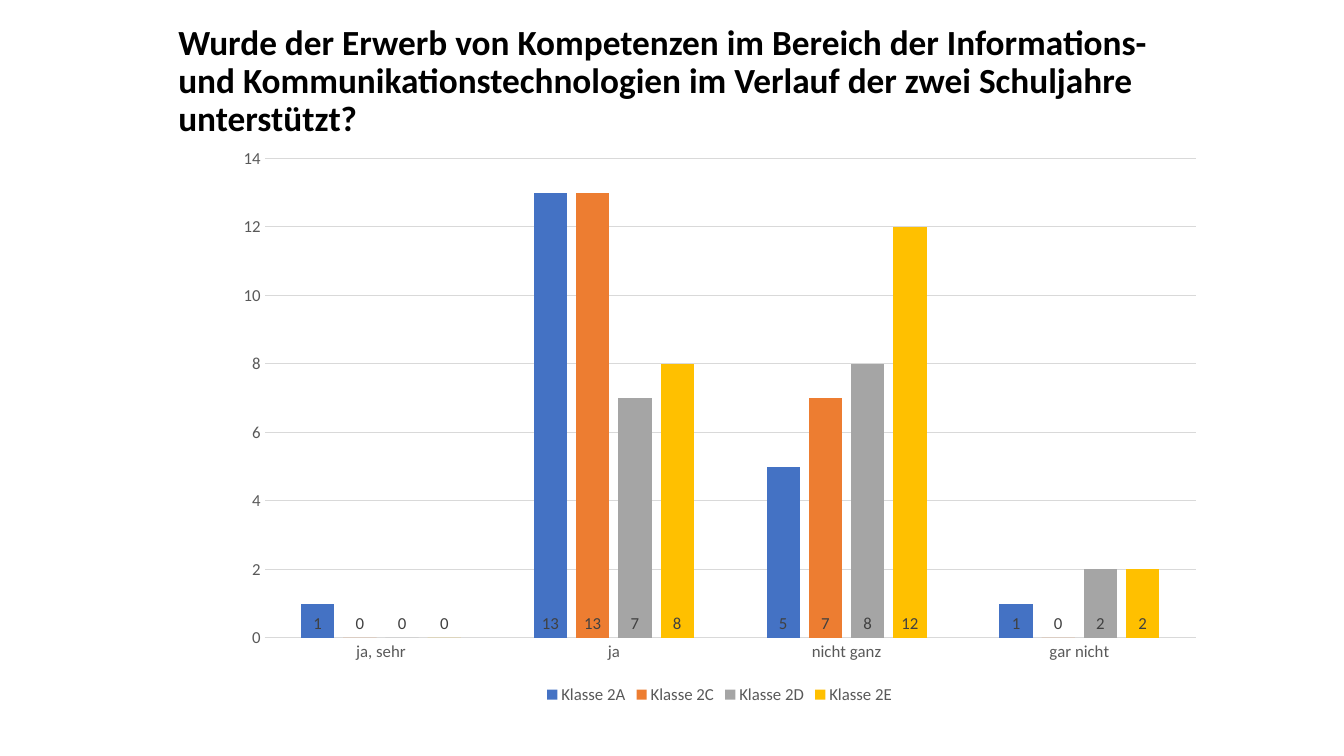
from lxml import etree
from pptx import Presentation
from pptx.chart.data import CategoryChartData
from pptx.dml.color import RGBColor
from pptx.enum.chart import XL_CHART_TYPE, XL_LABEL_POSITION, XL_LEGEND_POSITION, XL_TICK_MARK
from pptx.enum.text import MSO_ANCHOR
from pptx.util import Inches, Pt

COLUMNS = XL_CHART_TYPE.COLUMN_CLUSTERED
INSIDE_BASE = XL_LABEL_POSITION.INSIDE_BASE
LEGEND_BOTTOM = XL_LEGEND_POSITION.BOTTOM
NO_TICK = XL_TICK_MARK.NONE
ANCHOR_BOTTOM = MSO_ANCHOR.BOTTOM

WIDTH, HEIGHT = Inches(13.33), Inches(7.5)
FONT = "Calibri"
GREY_TEXT, LABEL_TEXT, GRID = "595959", "404040", "D9D9D9"

QUESTION = (
    "Wurde der Erwerb von Kompetenzen im Bereich der Informations- "
    "und Kommunikationstechnologien im Verlauf der zwei Schuljahre unterstützt?"
)
ANSWERS = ["ja, sehr", "ja", "nicht ganz", "gar nicht"]
CLASSES = [
    ("Klasse 2A", "4472C4", [1, 13, 5, 1]),
    ("Klasse 2C", "ED7D31", [0, 13, 7, 0]),
    ("Klasse 2D", "A5A5A5", [0, 7, 8, 2]),
    ("Klasse 2E", "FFC000", [0, 8, 12, 2]),
]


def color(value):
    """Turn a hex string into a colour."""
    return RGBColor.from_string(value)


def area(left, top, width, height):
    """Turn shares of the slide's size into lengths."""
    return (int(left * WIDTH), int(top * HEIGHT), int(width * WIDTH), int(height * HEIGHT))


def style_font(font, size, ink, bold=False):
    """Set face, size, colour and weight of a font."""
    font.name, font.size, font.bold = FONT, Pt(size), bold
    font.color.rgb = color(ink)


def style_line(line, ink):
    """Draw a thin line in one colour."""
    line.color.rgb = color(ink)
    line.width = Pt(0.75)


def add_text(slide, place, text, size=12, ink="000000", bold=False, spacing=1.0):
    """Add a wrapped text box standing on its lower edge."""
    frame = slide.shapes.add_textbox(*place).text_frame
    frame.word_wrap = True
    frame.vertical_anchor = ANCHOR_BOTTOM
    paragraph = frame.paragraphs[0]
    paragraph.line_spacing = spacing
    run = paragraph.add_run()
    run.text = text
    style_font(run.font, size, ink, bold)


def style_axes(chart):
    """Format the answer axis and the count axis."""
    for axis in (chart.category_axis, chart.value_axis):
        axis.major_tick_mark = axis.minor_tick_mark = NO_TICK
        style_font(axis.tick_labels.font, 12, GREY_TEXT)
    style_line(chart.category_axis.format.line, GRID)
    counts = chart.value_axis
    counts.minimum_scale, counts.maximum_scale, counts.major_unit = 0, 14, 2
    counts.format.line.fill.background()
    counts.has_major_gridlines = True
    style_line(counts.major_gridlines.format.line, GRID)


def style_series(series, fill):
    """Fill the columns of one class and label them at the base."""
    series.invert_if_negative = False
    series.format.fill.solid()
    series.format.fill.fore_color.rgb = color(fill)
    labels = series.data_labels
    labels.show_value = True
    labels.position = INSIDE_BASE
    style_font(labels.font, 12, LABEL_TEXT)


def add_answer_chart(slide, place):
    """Add the clustered columns of answers by class."""
    answers = CategoryChartData(number_format="General")
    answers.categories = ANSWERS
    for name, _, counts in CLASSES:
        answers.add_series(name, counts)
    chart = slide.shapes.add_chart(COLUMNS, *place, answers).chart
    style_font(chart.font, 10, "000000")
    chart.has_title = False
    chart.has_legend = True
    chart.legend.position = LEGEND_BOTTOM
    chart.legend.include_in_layout = False
    style_font(chart.legend.font, 12, GREY_TEXT)
    plot = chart.plots[0]
    plot.vary_by_categories = False
    plot.gap_width, plot.overlap = 219, -27
    style_axes(chart)
    for series, (_, fill, _) in zip(plot.series, CLASSES):
        style_series(series, fill)


def main():
    """Build and save the slide."""
    deck = Presentation()
    deck.slide_width, deck.slide_height = WIDTH, HEIGHT
    slide = deck.slides.add_slide(deck.slide_layouts[6])
    add_answer_chart(slide, area(0.1665, 0.1813, 0.738, 0.756))
    add_text(slide, area(0.1253, 0.0627, 0.741, 0.128), QUESTION,
             size=25.2, bold=True, spacing=0.9)
    deck.save("out.pptx")


if __name__ == "__main__":
    main()
